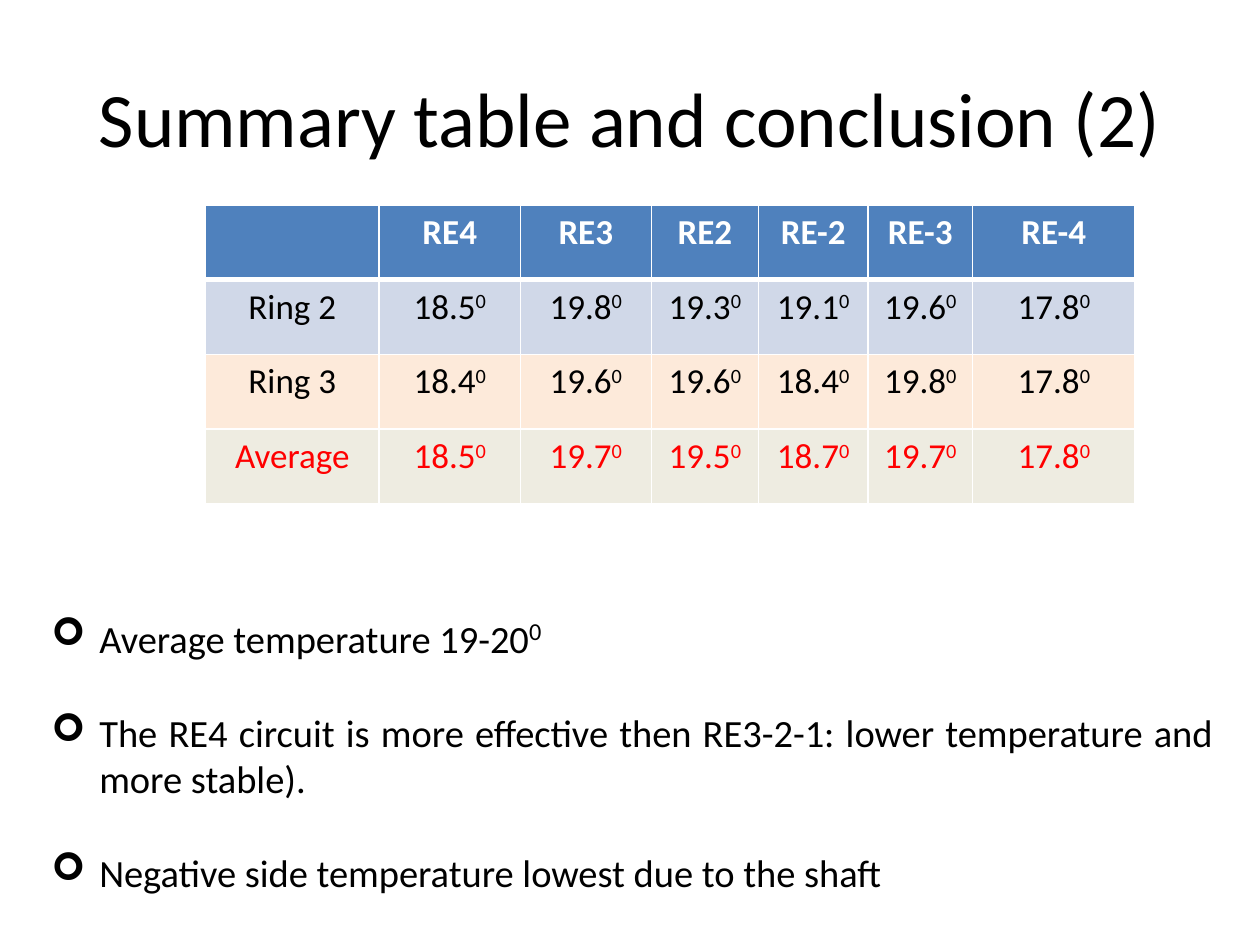
from dataclasses import dataclass

from lxml import etree
from pptx import Presentation
from pptx.dml.color import RGBColor
from pptx.enum.text import MSO_ANCHOR, MSO_AUTO_SIZE, PP_ALIGN
from pptx.oxml.ns import qn
from pptx.util import Inches, Pt

CENTER, JUSTIFY = PP_ALIGN.CENTER, PP_ALIGN.JUSTIFY
MIDDLE = MSO_ANCHOR.MIDDLE
FIT_SHAPE = MSO_AUTO_SIZE.SHAPE_TO_FIT_TEXT
TITLE_ONLY = 5
SLIDE_WIDTH, SLIDE_HEIGHT = 10, 7.5


@dataclass(frozen=True)
class Theme:
    font: str = "Calibri"
    title_size: int = 44
    table_size: int = 20
    bullet_size: int = 22
    bullet_degree_size: int = 24
    bullet_gap: int = 27
    text: str = "000000"
    header_text: str = "FFFFFF"
    average_text: str = "FF0000"
    border: str = "FFFFFF"
    header_fill: str = "4F81BD"
    row_fills: tuple = ("D0D8E8", "FDEADA", "EEECE1")


THEME = Theme()

COLUMN_WIDTHS = [1.38, 1.12, 1.04, 0.85, 0.87, 0.83, 1.29]
HEADERS = ["", "RE4", "RE3", "RE2", "RE-2", "RE-3", "RE-4"]
RINGS = [
    ("Ring 2", [18.5, 19.8, 19.3, 19.1, 19.6, 17.8]),
    ("Ring 3", [18.4, 19.6, 19.6, 18.4, 19.8, 17.8]),
    ("Average", [18.5, 19.7, 19.5, 18.7, 19.7, 17.8]),
]
CONCLUSIONS = [
    ("Average temperature 19-20", True),
    ("The RE4 circuit is more effective then RE3-2-1: lower temperature and more stable).", False),
    ("Negative side temperature lowest due to the shaft", False),
]


def share_box(left, top, width, height):
    """Turn shares of the slide's size into left, top, width and height."""
    return (Inches(left * SLIDE_WIDTH), Inches(top * SLIDE_HEIGHT),
            Inches(width * SLIDE_WIDTH), Inches(height * SLIDE_HEIGHT))


def format_font(font, size, color, bold=False):
    font.name = THEME.font
    font.size = Pt(size)
    font.bold = bold
    font.color.rgb = RGBColor.from_string(color)


def write_text(paragraph, text, size, color, bold=False, degree_size=None):
    """Fill a paragraph, with a raised 0 as degree sign if degree_size is given."""
    paragraph.text = text
    for run in paragraph.runs:
        format_font(run.font, size, color, bold)
    if degree_size:
        degree = paragraph.add_run()
        degree.text = "0"
        format_font(degree.font, degree_size, color, bold)
        degree.font._element.set("baseline", "30000")


def add_title(slide, text):
    title = slide.shapes.title
    title.left, title.top, title.width, title.height = share_box(0.05, 0.04, 0.9, 0.167)
    title.text_frame.text = text
    title.text_frame.vertical_anchor = MIDDLE
    paragraph = title.text_frame.paragraphs[0]
    paragraph.alignment = CENTER
    format_font(paragraph.runs[0].font, THEME.title_size, THEME.text)


def set_borders(cell, top=1, bottom=1):
    """Draw all four sides; top and bottom are line widths in points."""
    properties = cell._tc.get_or_add_tcPr()
    for side, width in (("L", 1), ("R", 1), ("T", top), ("B", bottom)):
        line = etree.SubElement(properties, qn(f"a:ln{side}"), w=str(Pt(width)))
        fill = etree.SubElement(line, qn("a:solidFill"))
        etree.SubElement(fill, qn("a:srgbClr"), val=THEME.border)


def format_cell(cell, text, fill, color, bold=False, degree=False, **borders):
    set_borders(cell, **borders)
    cell.fill.solid()
    cell.fill.fore_color.rgb = RGBColor.from_string(fill)
    paragraph = cell.text_frame.paragraphs[0]
    paragraph.alignment = CENTER
    size = THEME.table_size
    write_text(paragraph, text, size, color, bold, size if degree else None)


def add_temperature_table(slide):
    box = share_box(0.163, 0.217, 0.738, 0.316)
    table = slide.shapes.add_table(len(RINGS) + 1, len(HEADERS), *box).table
    for column, width in zip(table.columns, COLUMN_WIDTHS):
        column.width = Inches(width)
    for index, header in enumerate(HEADERS):
        format_cell(table.cell(0, index), header, THEME.header_fill,
                    THEME.header_text, bold=True, bottom=3)
    for row, ((name, values), fill) in enumerate(zip(RINGS, THEME.row_fills), 1):
        color = THEME.average_text if name == "Average" else THEME.text
        top = 3 if row == 1 else 1
        format_cell(table.cell(row, 0), name, fill, color, top=top)
        for column, value in enumerate(values, 1):
            format_cell(table.cell(row, column), f"{value:.1f}", fill, color,
                        degree=True, top=top)


def set_arrow_bullet(paragraph):
    properties = paragraph._p.get_or_add_pPr()
    indent = Inches(0.38)
    properties.set("marL", str(indent))
    properties.set("indent", str(-indent))
    etree.SubElement(properties, qn("a:buFont"), typeface="Wingdings")
    etree.SubElement(properties, qn("a:buChar"), char="➢")


def add_conclusions(slide):
    shape = slide.shapes.add_textbox(*share_box(0.031, 0.591, 0.942, 0.359))
    frame = shape.text_frame
    frame.word_wrap = True
    frame.auto_size = FIT_SHAPE
    frame.margin_top = Inches(0.42)
    for index, (text, has_degree) in enumerate(CONCLUSIONS):
        paragraph = frame.add_paragraph() if index else frame.paragraphs[0]
        paragraph.alignment = JUSTIFY
        if index:
            paragraph.space_before = Pt(THEME.bullet_gap)
        set_arrow_bullet(paragraph)
        write_text(paragraph, text, THEME.bullet_size, THEME.text,
                   degree_size=THEME.bullet_degree_size if has_degree else None)


def main():
    presentation = Presentation()
    presentation.slide_width = Inches(SLIDE_WIDTH)
    presentation.slide_height = Inches(SLIDE_HEIGHT)
    slide = presentation.slides.add_slide(presentation.slide_layouts[TITLE_ONLY])
    add_title(slide, "Summary table and conclusion (2)")
    add_conclusions(slide)
    add_temperature_table(slide)
    presentation.save("out.pptx")


if __name__ == "__main__":
    main()
